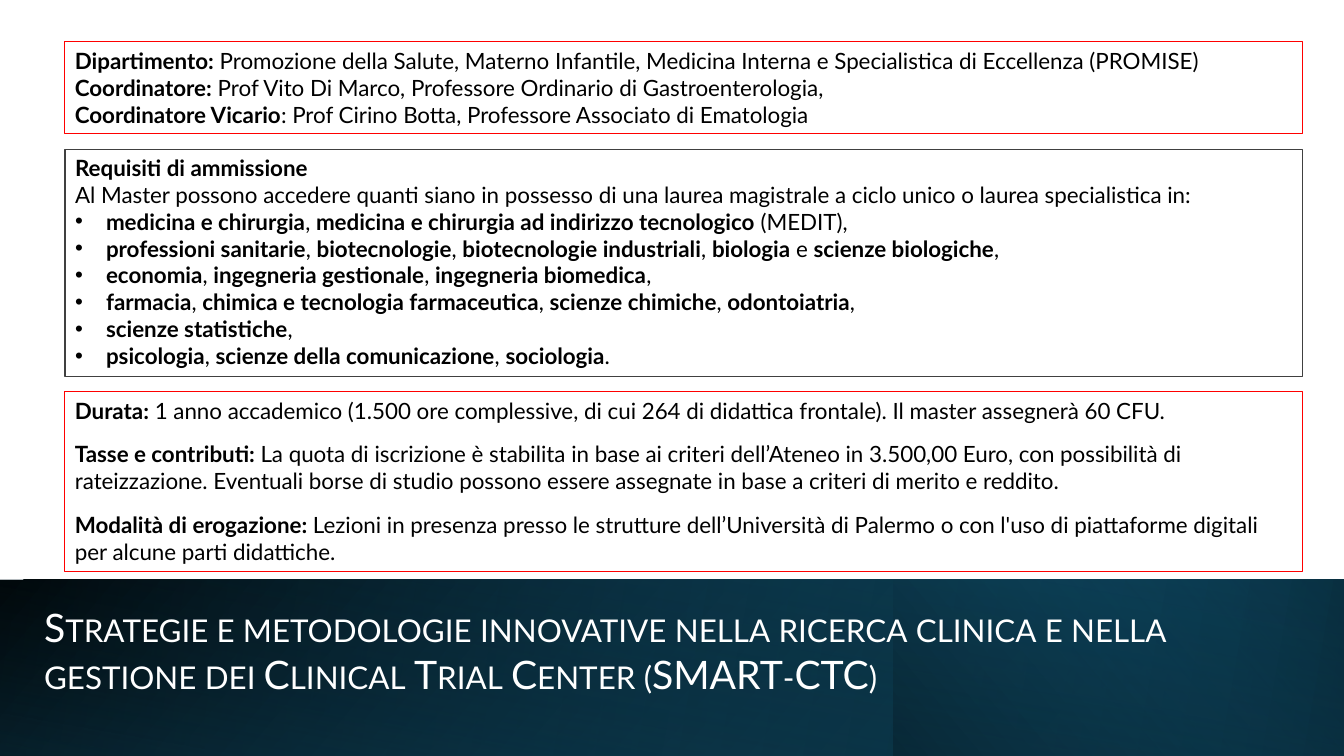
"""Build the slide presenting the SMART-CTC master course."""
from lxml.etree import SubElement
from pptx import Presentation
from pptx.dml.color import RGBColor
from pptx.enum.shapes import MSO_SHAPE as Preset
from pptx.enum.text import MSO_ANCHOR as Anchor, MSO_AUTO_SIZE as AutoSize, PP_ALIGN as Align
from pptx.oxml.ns import qn
from pptx.util import Pt

BLACK = RGBColor(0x00, 0x00, 0x00)
WHITE = RGBColor(0xFF, 0xFF, 0xFF)
RED = RGBColor(0xFF, 0x00, 0x00)
GREY = RGBColor(0x40, 0x40, 0x40)
TEAL = RGBColor(0x15, 0x60, 0x82)
NAVY = RGBColor(0x0B, 0x30, 0x41)
FONT = "Lato"
PX = 914400 / 100.8
BULLET_INDENT = 31

TITLE = ("Strategie e metodologie innovative nella ricerca clinica e nella "
         "gestione dei Clinical Trial Center (SMART-CTC)")
TITLE_AREA = (34, 598, 1283, 105)

PEOPLE = [
    "*Dipartimento:* Promozione della Salute, Materno Infantile, Medicina Interna e "
    "Specialistica di Eccellenza (PROMISE)",
    "*Coordinatore:* Prof Vito Di Marco, Professore Ordinario di Gastroenterologia,",
    "*Coordinatore Vicario*: Prof Cirino Botta, Professore Associato di Ematologia",
]
ADMISSION = [
    "*Requisiti di ammissione*",
    "Al Master possono accedere quanti siano in possesso di una laurea magistrale "
    "a ciclo unico o laurea specialistica in:",
    "•*medicina e chirurgia*, *medicina e chirurgia ad indirizzo tecnologico* (MEDIT),",
    "•*professioni sanitarie*, *biotecnologie*, *biotecnologie industriali*, "
    "*biologia* e *scienze biologiche*,",
    "•*economia*, *ingegneria gestionale*, *ingegneria biomedica*,",
    "•*farmacia*, *chimica e tecnologia farmaceutica*, *scienze chimiche*, *odontoiatria*,",
    "•*scienze statistiche*,",
    "•*psicologia*, *scienze della comunicazione*, *sociologia*.",
]
COURSE = [
    "*Durata:* 1 anno accademico (1.500 ore complessive, di cui 264 di didattica "
    "frontale). Il master assegnerà 60 CFU.",
    "*Tasse e contributi: *La quota di iscrizione è stabilita in base ai criteri "
    "dell’Ateneo in 3.500,00 Euro, con possibilità di rateizzazione. Eventuali borse "
    "di studio possono essere assegnate in base a criteri di merito e reddito.",
    "*Modalità di erogazione: *Lezioni in presenza presso le strutture dell’Università "
    "di Palermo o con l'uso di piattaforme digitali per alcune parti didattiche.",
]
BOX_LEFT, BOX_TOP, BOX_WIDTH, BOX_GAP = 65, 42, 1238, 15
BOXES = [
    {"lines": PEOPLE, "height": 92, "border": RED, "after": 0, "body": False},
    {"lines": ADMISSION, "height": 228, "border": GREY, "after": 0, "body": True},
    {"lines": COURSE, "height": 180, "border": RED, "after": 12, "body": False},
]
BANDS = [
    {"area": (0, 580, 1344, 176), "angle": 140, "rotation": 0,
     "stops": [(0, BLACK, 100), (100, TEAL, 100)]},
    {"area": (0, 580, 1344, 176), "angle": 170, "rotation": 0,
     "stops": [(0, TEAL, 0), (100, NAVY, 100)]},
    {"area": (894, 580, 450, 176), "angle": 220, "rotation": 0,
     "stops": [(0, NAVY, 100), (100, TEAL, 0)]},
    {"area": (-1, 580, 1344, 176), "angle": 280, "rotation": 180,
     "stops": [(0, BLACK, 0), (99, NAVY, 55)]},
]


def px(length):
    return round(length * PX)


def place(shape, area):
    shape.left, shape.top, shape.width, shape.height = map(px, area)


def add_rectangle(slide, area):
    shape = slide.shapes.add_shape(Preset.RECTANGLE, *map(px, area))
    shape.shadow.inherit = False
    return shape


def add_band(slide, band):
    shape = add_rectangle(slide, band["area"])
    shape.line.fill.background()
    shape.rotation = band["rotation"]
    if not band["rotation"]:
        shape._element.spPr.find(qn("a:xfrm")).set("flipH", "1")
    shape.fill.gradient()
    shape.fill.gradient_angle = 360 - band["angle"]
    for stop, (position, color, _) in zip(shape.fill.gradient_stops, band["stops"]):
        stop.position = position / 100
        stop.color.rgb = color
    colors = shape._element.spPr.iter(qn("a:srgbClr"))
    for element, (_, _, opacity) in zip(colors, band["stops"]):
        if opacity < 100:
            SubElement(element, qn("a:alpha")).set("val", str(opacity * 1000))


def prepare_frame(shape):
    frame = shape.text_frame
    frame.word_wrap = True
    frame.auto_size = AutoSize.NONE
    frame.vertical_anchor = Anchor.TOP
    return frame


def add_run(paragraph, text, size, color, bold=False):
    run = paragraph.add_run()
    run.text = text
    run.font.name, run.font.size, run.font.bold = FONT, Pt(size), bold
    run.font.color.rgb = color
    return run


def set_bullet(paragraph, bulleted):
    properties = paragraph._p.get_or_add_pPr()
    indent = px(BULLET_INDENT) if bulleted else 0
    properties.set("marL", str(indent))
    properties.set("indent", str(-indent))
    if bulleted:
        SubElement(properties, qn("a:buFont")).set("typeface", "Arial")
        SubElement(properties, qn("a:buChar")).set("char", "•")
    else:
        SubElement(properties, qn("a:buNone"))


def write_lines(shape, lines, after):
    frame = prepare_frame(shape)
    for index, line in enumerate(lines):
        paragraph = frame.add_paragraph() if index else frame.paragraphs[0]
        paragraph.alignment = Align.LEFT
        paragraph.space_before, paragraph.space_after = Pt(0), Pt(after)
        set_bullet(paragraph, line.startswith("•"))
        for part, text in enumerate(line.lstrip("•").split("*")):
            if text:
                add_run(paragraph, text, 16, BLACK, bold=part % 2 == 1)


def write_title(shape):
    place(shape, TITLE_AREA)
    paragraph = prepare_frame(shape).paragraphs[0]
    paragraph.alignment = Align.LEFT
    run = add_run(paragraph, TITLE, 28, WHITE)
    run._r.get_or_add_rPr().set("cap", "small")


def main():
    presentation = Presentation()
    presentation.slide_width, presentation.slide_height = px(1344), px(756)
    slide = presentation.slides.add_slide(presentation.slide_layouts[1])
    title, body = slide.placeholders
    for band in BANDS:
        add_band(slide, band)
    slide.shapes._spTree.append(title._element)
    write_title(title)

    top = BOX_TOP
    for box in BOXES:
        area = (BOX_LEFT, top, BOX_WIDTH, box["height"])
        if box["body"]:
            shape = body
            place(shape, area)
        else:
            shape = add_rectangle(slide, area)
        shape.fill.background()
        shape.line.color.rgb = box["border"]
        shape.line.width = Pt(0.75)
        write_lines(shape, box["lines"], box["after"])
        top += box["height"] + BOX_GAP
    presentation.save("out.pptx")


if __name__ == "__main__":
    main()
